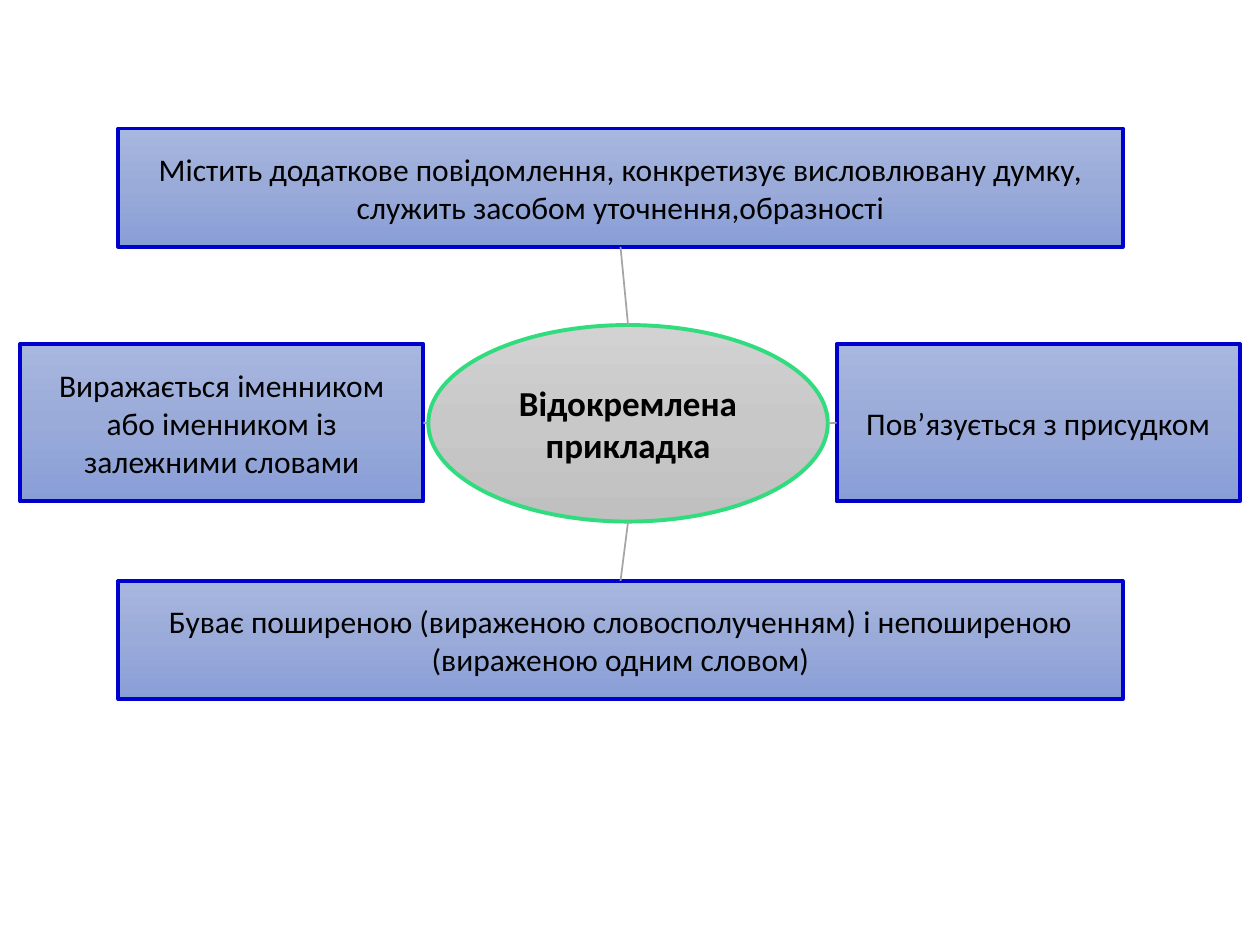
from copy import deepcopy

from lxml import etree
from pptx import Presentation
from pptx import util as u
from pptx.dml.color import RGBColor
from pptx.enum import shapes, text
from pptx.oxml import ns

BLACK = RGBColor(0x00, 0x00, 0x00)
GREEN = RGBColor(0x30, 0xDC, 0x7E)
NAVY = RGBColor(0x00, 0x00, 0xCC)
ASH = RGBColor(0xA5, 0xA5, 0xA5)
GREYS = [RGBColor(0xD2, 0xD2, 0xD2), RGBColor(0xC8, 0xC8, 0xC8), RGBColor(0xC0, 0xC0, 0xC0)]
BLUES = [RGBColor(0xA8, 0xB7, 0xDF), RGBColor(0x9A, 0xAB, 0xD9), RGBColor(0x88, 0x9E, 0xD7)]

KIND = shapes.MSO_SHAPE


class Board:
    """Holds the style and the current slide."""

    face = {"name": "Calibri", "size": u.Pt(18), "bold": False}
    edge = u.Pt(2.25)
    thin = u.Pt(1)

    def __init__(self, slide):
        self.slide = slide

    def shade(self, shape, tones):
        """Fill a shape from top to bottom with evenly spaced tones."""
        fill = shape.fill
        fill.gradient()
        fill.gradient_angle = 270
        stops = shape._element.spPr.find(".//" + ns.qn("a:gsLst"))
        while len(stops) < len(tones):
            stops.append(deepcopy(stops[0]))
        for i, (stop, tone) in enumerate(zip(fill.gradient_stops, tones)):
            stop.position = i / (len(tones) - 1)
            stop.color.rgb = tone

    def node(self, kind, area, words, tones, rim, **extra):
        shape = self.slide.shapes.add_shape(kind, *map(u.Inches, area))
        shape.shadow.inherit = False
        self.shade(shape, tones)
        shape.line.color.rgb = rim
        shape.line.width = self.edge
        frame = shape.text_frame
        frame.word_wrap = True
        frame.vertical_anchor = text.MSO_ANCHOR.MIDDLE
        par = frame.paragraphs[0]
        par.alignment = text.PP_ALIGN.CENTER
        run = par.add_run()
        run.text = words
        for key, value in {**self.face, **extra}.items():
            setattr(run.font, key, value)
        run.font.color.rgb = BLACK
        return shape

    def box(self, area, words):
        return self.node(KIND.RECTANGLE, area, words, BLUES, NAVY)

    def link(self, start, end):
        line = self.slide.shapes.add_connector(shapes.MSO_CONNECTOR.STRAIGHT, *start, *end)
        line.line.color.rgb = ASH
        line.line.width = self.thin
        etree.SubElement(line._element.spPr, ns.qn("a:effectLst"))


def side(shape, across, down):
    """Point on a shape, given as shares of its width and height."""
    return (int(shape.left + shape.width * across),
            int(shape.top + shape.height * down))


def main():
    deck = Presentation()
    deck.slide_width, deck.slide_height = u.Inches(10), u.Inches(7.5)
    board = Board(deck.slides.add_slide(deck.slide_layouts[6]))

    core = board.node(KIND.OVAL, (3.4, 2.58, 3.17, 1.56), "Відокремлена прикладка",
                      GREYS, GREEN, size=u.Pt(20), bold=True)
    low = board.box((0.94, 4.61, 7.97, 0.94),
                    "Буває поширеною (вираженою словосполученням) і непоширеною "
                    "(вираженою одним словом)")
    top = board.box((0.94, 1.02, 7.97, 0.94),
                    "Містить додаткове повідомлення, конкретизує висловлювану думку, "
                    "служить засобом уточнення,образності")
    right = board.box((6.64, 2.73, 3.2, 1.25), "Пов’язується з присудком")
    left = board.box((0.16, 2.73, 3.2, 1.25),
                     "Виражається іменником або іменником із залежними словами")

    board.link(side(top, 0.5, 1), side(core, 0.5, 0))
    board.link(side(core, 0.5, 1), side(low, 0.5, 0))
    board.link(side(left, 1, 0.5), side(core, 0, 0.5))
    board.link(side(core, 1, 0.5), side(right, 0, 0.5))

    deck.save("out.pptx")


if __name__ == "__main__":
    main()
